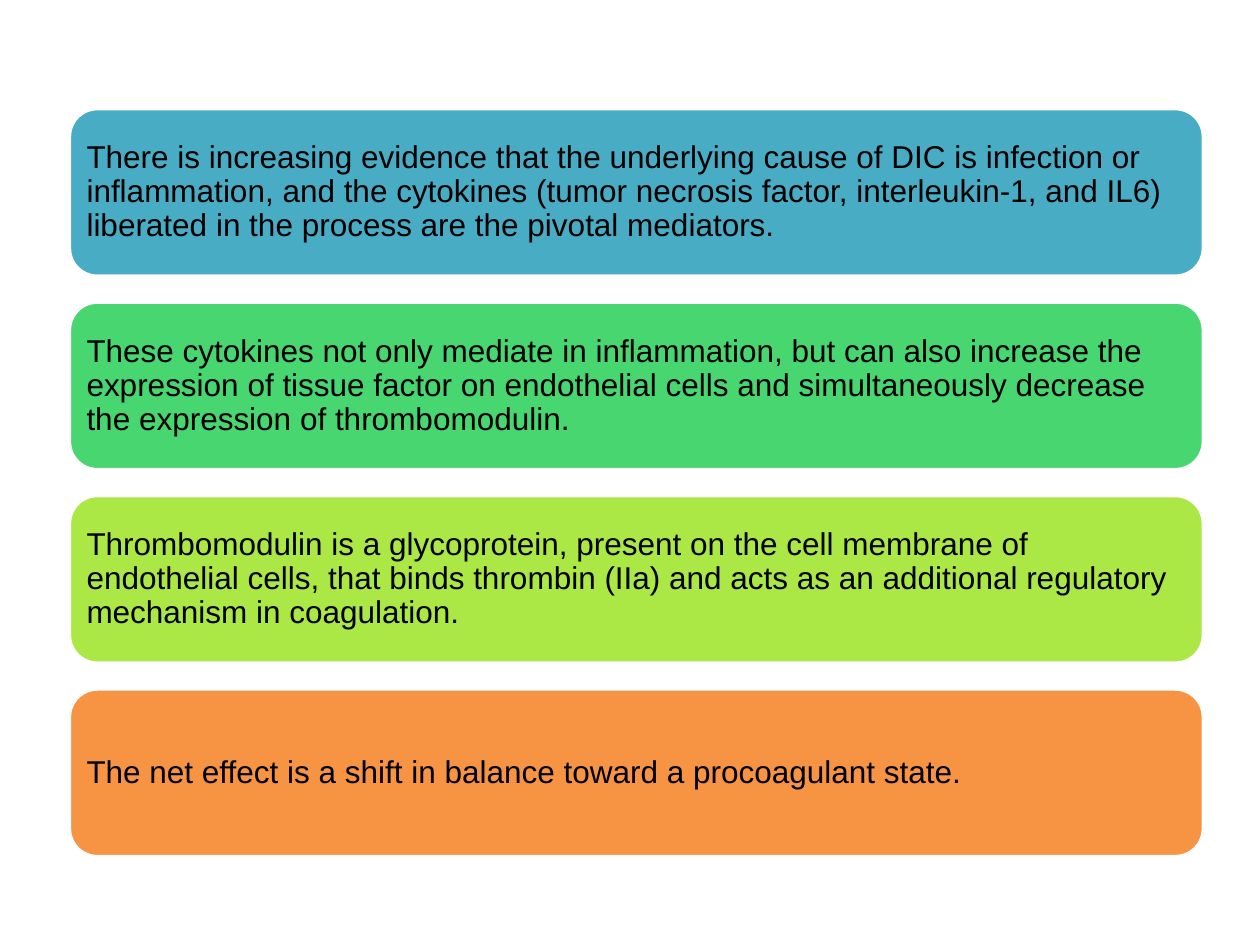
from pptx import Presentation
from pptx.dml.color import RGBColor
from pptx.enum.shapes import MSO_SHAPE
from pptx.enum.text import MSO_ANCHOR, PP_ALIGN
from pptx.util import Cm, Pt

COLORS = {
    "blue": "49ACC5",
    "green": "47D670",
    "lime": "ABE745",
    "orange": "F69444",
    "outline": "FFFFFF",
    "text": "000000",
}

STATEMENTS = [
    ("blue", "There is increasing evidence that the underlying cause of DIC is infection or "
             "inflammation, and the cytokines (tumor necrosis factor, interleukin-1, and IL6) "
             "liberated in the process are the pivotal mediators."),
    ("green", "These cytokines not only mediate in inflammation, but can also increase the "
              "expression of tissue factor on endothelial cells and simultaneously decrease "
              "the expression of thrombomodulin."),
    ("lime", "Thrombomodulin is a glycoprotein, present on the cell membrane of "
             "endothelial cells, that binds thrombin (IIa) and acts as an additional regulatory "
             "mechanism in coagulation."),
    ("orange", "The net effect is a shift in balance toward a procoagulant state."),
]

LEFT, TOP, WIDTH, HEIGHT, PITCH = 1.4, 2.19, 22.86, 3.38, 3.9


class SlideBuilder:
    font_name = "Arial"
    font_size = Pt(18)
    line_width = Pt(2)
    line_spacing = 0.9
    corner = 0.167
    inset = Cm(0.18)

    def __init__(self, slide):
        self.slide = slide

    def color(self, name):
        return RGBColor.from_string(COLORS[name])

    def panel(self, left, top, width, height, fill, text):
        shape = self.slide.shapes.add_shape(
            MSO_SHAPE.ROUNDED_RECTANGLE, Cm(left), Cm(top), Cm(width), Cm(height))
        shape.adjustments[0] = self.corner
        shape.shadow.inherit = False
        shape.fill.solid()
        shape.fill.fore_color.rgb = self.color(fill)
        shape.line.color.rgb = self.color("outline")
        shape.line.width = self.line_width
        self.set_text(shape.text_frame, text)

    def set_text(self, text_frame, text):
        text_frame.text = text
        text_frame.word_wrap = True
        text_frame.vertical_anchor = MSO_ANCHOR.MIDDLE
        text_frame.margin_left = text_frame.margin_right = self.inset
        text_frame.margin_top = text_frame.margin_bottom = self.inset
        for paragraph in text_frame.paragraphs:
            paragraph.alignment = PP_ALIGN.LEFT
            paragraph.line_spacing = self.line_spacing
            for run in paragraph.runs:
                run.font.name = self.font_name
                run.font.size = self.font_size
                run.font.color.rgb = self.color("text")


def main():
    presentation = Presentation()
    presentation.slide_width = Cm(25.4)
    presentation.slide_height = Cm(19.05)
    builder = SlideBuilder(presentation.slides.add_slide(presentation.slide_layouts[6]))
    for index, (fill, text) in enumerate(STATEMENTS):
        builder.panel(LEFT, TOP + index * PITCH, WIDTH, HEIGHT, fill, text)
    presentation.save("out.pptx")


if __name__ == "__main__":
    main()
